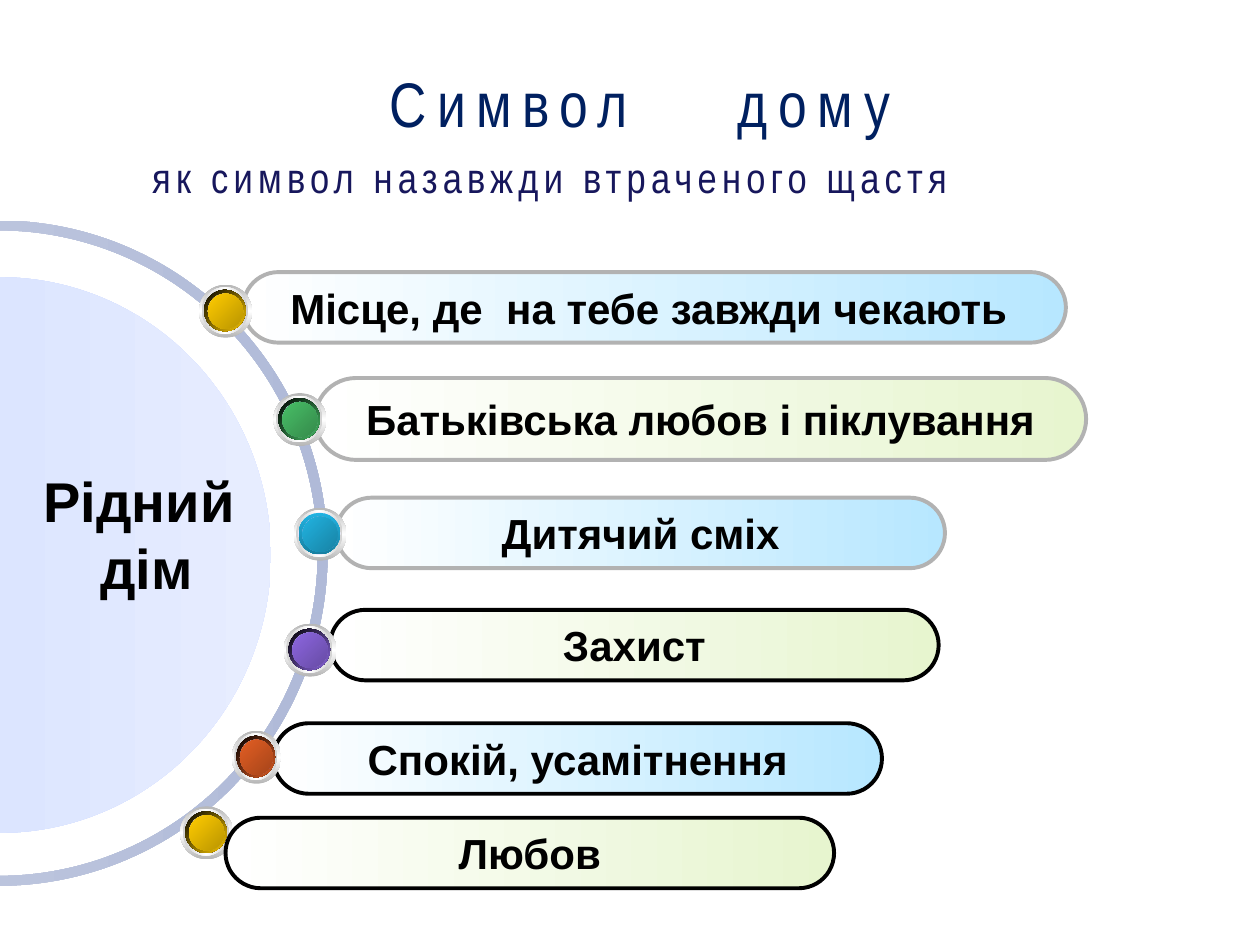
from lxml import etree
from pptx import Presentation
from pptx.dml.color import RGBColor
from pptx.enum import shapes, text
from pptx.oxml.ns import qn
from pptx.util import Inches, Pt

BLUE, GREEN = "B7E7FF", "E7F5CF"
GREY, BLACK = "B2B2B2", "000000"

ARCS = [
    ((-2.62, 1.75, 5.22, 5.28), 0.015, ("C8CFE3", "B0BAD8")),
    ((-2.15, 2.2, 4.3, 4.41), 0.5, ("CFDCFF", "E7EDFF")),
]

PILLS = [
    ((2.17, 5.74, 4.83, 0.56), BLUE, BLACK, [("Спокій, усамітнення", 0)], 0.1),
    ((2.62, 4.84, 4.83, 0.56), GREEN, BLACK, [("Захист", 0)], 0.1),
    ((2.67, 3.95, 4.83, 0.56), BLUE, GREY, [("Дитячий сміх", 0)], 0.1),
    ((2.5, 3, 6.12, 0.65), GREEN, GREY, [("Батьківська любов і піклування", 0)], 0.1),
    ((1.93, 2.16, 6.53, 0.56), BLUE, GREY,
     [("Місце, де", 0), (" ", 6.67), ("на тебе завжди чекають", 0)], 0.19),
]
LAST_PILL = ((1.79, 6.49, 4.83, 0.56), GREEN, BLACK, [("Любов", 0)], 0.1)

KNOBS = [
    (1.58, 2.26, 0.42, "FFCC00", "BA9500", (BLACK, "FFCC00"), 45),
    (2.17, 3.12, 0.42, "48BE67", "358B4B", (BLACK, "48BE67"), 45),
    (2.33, 4.03, 0.42, "21B3E1", "1883A4", ("21B3E1", "1880A1"), 90),
    (2.25, 4.95, 0.42, "8D67E1", "674BA4", (BLACK, "8D67E1"), 45),
    (1.84, 5.8, 0.39, "E35E23", "A6451A", (BLACK, "E35E23"), 45),
    (1.43, 6.4, 0.42, "FFCC00", "BA9500", (BLACK, "FFCC00"), 45),
]
KNOB_HEIGHT = 0.42

TITLE = [("Символ", 6), (" ", 48.6), ("дому", 6)]
SUBTITLE = [("як символ назавжди втраченого щастя", 3)]
CENTRE = ["Рідний", "дім"]


def rgb(value):
    return RGBColor.from_string(value)


def gradient(s, colors, angle=0):
    s.fill.gradient()
    fill = s._element.spPr.find(qn("a:gradFill"))
    stops = fill.find(qn("a:gsLst"))
    for stop in list(stops):
        stops.remove(stop)
    for i, color in enumerate(colors):
        stop = etree.SubElement(stops, qn("a:gs"), pos=str(100000 * i // (len(colors) - 1)))
        etree.SubElement(stop, qn("a:srgbClr"), val=color)
    fill.find(qn("a:lin")).set("ang", str(angle * 60000))


def add_shape(parent, kind, box, colors, angle=0):
    s = parent.add_shape(kind, *map(Inches, box))
    s.shadow.inherit = False
    s.line.fill.background()
    gradient(s, colors, angle)
    return s


def write(p, runs, size, color, font="Arial", bold=False, align=text.PP_ALIGN.CENTER):
    for content, spacing in runs:
        r = p.add_run()
        r.text = content
        if spacing:
            r._r.get_or_add_rPr().set("spc", str(round(spacing * 100)))
    p.alignment = align
    p.font.size = Pt(size)
    p.font.name = font
    p.font.bold = bold
    p.font.color.rgb = rgb(color)


def add_text(parent, box, anchor=text.MSO_ANCHOR.TOP):
    tf = parent.add_textbox(*map(Inches, box)).text_frame
    tf.word_wrap = True
    tf.vertical_anchor = anchor
    return tf


def add_pill(parent, box, color, outline, runs, right_margin):
    s = add_shape(parent, shapes.MSO_SHAPE.ROUNDED_RECTANGLE, box, ("FFFFFF", color))
    s.adjustments[0] = 0.5
    s.line.color.rgb = rgb(outline)
    s.line.width = Pt(2.25)
    tf = s.text_frame
    tf.word_wrap = False
    tf.vertical_anchor = text.MSO_ANCHOR.MIDDLE
    tf.margin_right = Inches(right_margin)
    write(tf.paragraphs[0], runs, 24, BLACK, bold=True)


def add_knob(parent, left, top, width, light, dark, rim, rim_angle):
    layers = [
        (0, 0.42, ("B6B6B6", "FFFFFF", "B6B6B6"), 90),
        (0.02, 0.37, ("D1D1D1", "FFFFFF", "D1D1D1"), 0),
        (0.04, 0.33, ("FFFFFF", "CCCCFF", "FFFFFF"), 45),
        (0.04, 0.33, rim, rim_angle),
        (0.07, 0.28, ("9C9CC3", "CCCCFF", "9C9CC3"), 315),
        (0.07, 0.28, (light, dark), 45),
    ]
    group = parent.add_group_shape().shapes
    scale = width / KNOB_HEIGHT
    for inset, size, colors, angle in layers:
        box = (left + inset * scale, top + inset, size * scale, size)
        add_shape(group, shapes.MSO_SHAPE.OVAL, box, colors, angle)


def main():
    prs = Presentation()
    prs.slide_width, prs.slide_height = Inches(10), Inches(7.5)
    sp = prs.slides.add_slide(prs.slide_layouts[6]).shapes

    for box, thickness, colors in ARCS:
        s = add_shape(sp, shapes.MSO_SHAPE.BLOCK_ARC, box, colors)
        for i, value in enumerate((162, 54, thickness)):
            s.adjustments[i] = value

    for pill in PILLS:
        add_pill(sp, *pill)
    for knob in KNOBS:
        add_knob(sp, *knob)
    add_pill(sp, *LAST_PILL)

    tf = add_text(sp, (0.08, 0.52, 10, 0.58), text.MSO_ANCHOR.MIDDLE)
    write(tf.paragraphs[0], TITLE, 36, "002060", "Arial Narrow")

    tf = add_text(sp, (0, 3.65, 2.21, 1.18))
    for i, line in enumerate(CENTRE):
        p = tf.add_paragraph() if i else tf.paragraphs[0]
        write(p, [(line, 0)], 32, BLACK, bold=True)
    p._p.get_or_add_pPr().set("marL", str(Inches(0.12)))

    tf = add_text(sp, (1.11, 1.15, 7.99, 0.5))
    write(tf.paragraphs[0], SUBTITLE, 24, "17175C", "Arial Narrow", align=text.PP_ALIGN.LEFT)

    prs.save("out.pptx")


if __name__ == "__main__":
    main()
